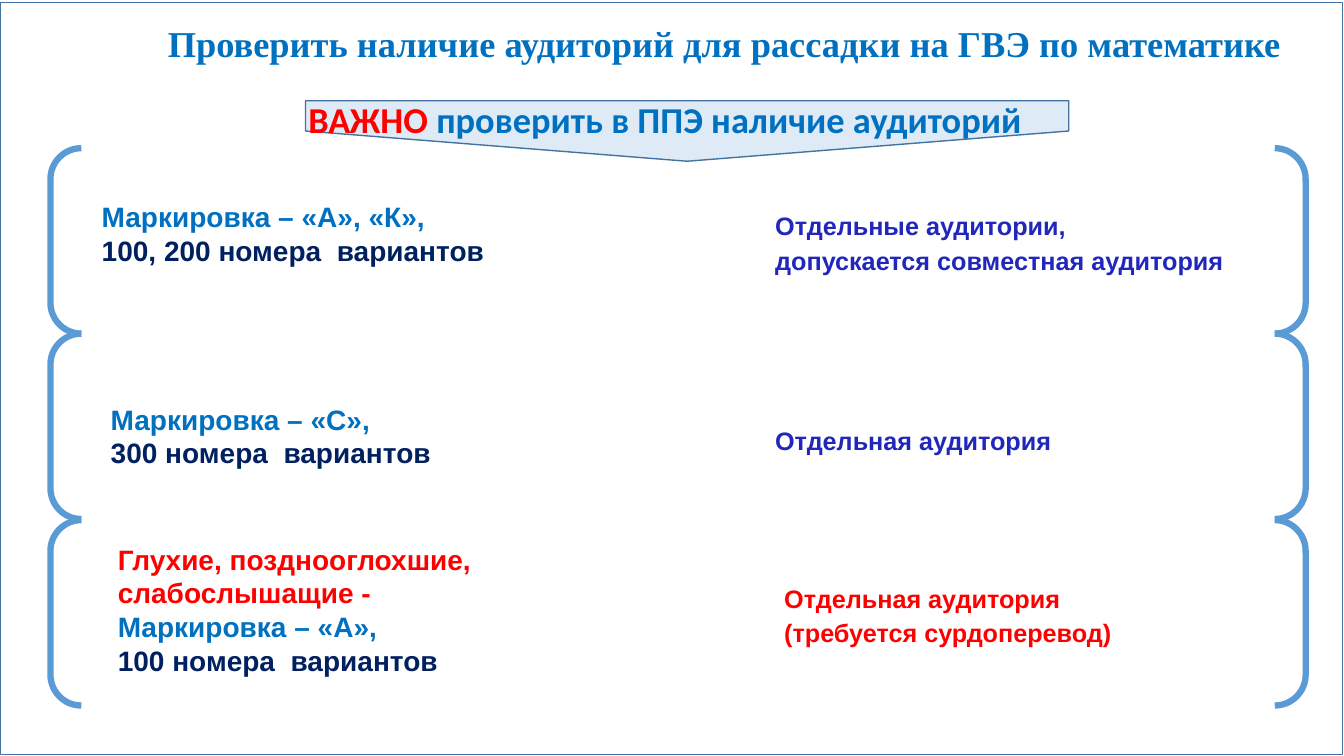
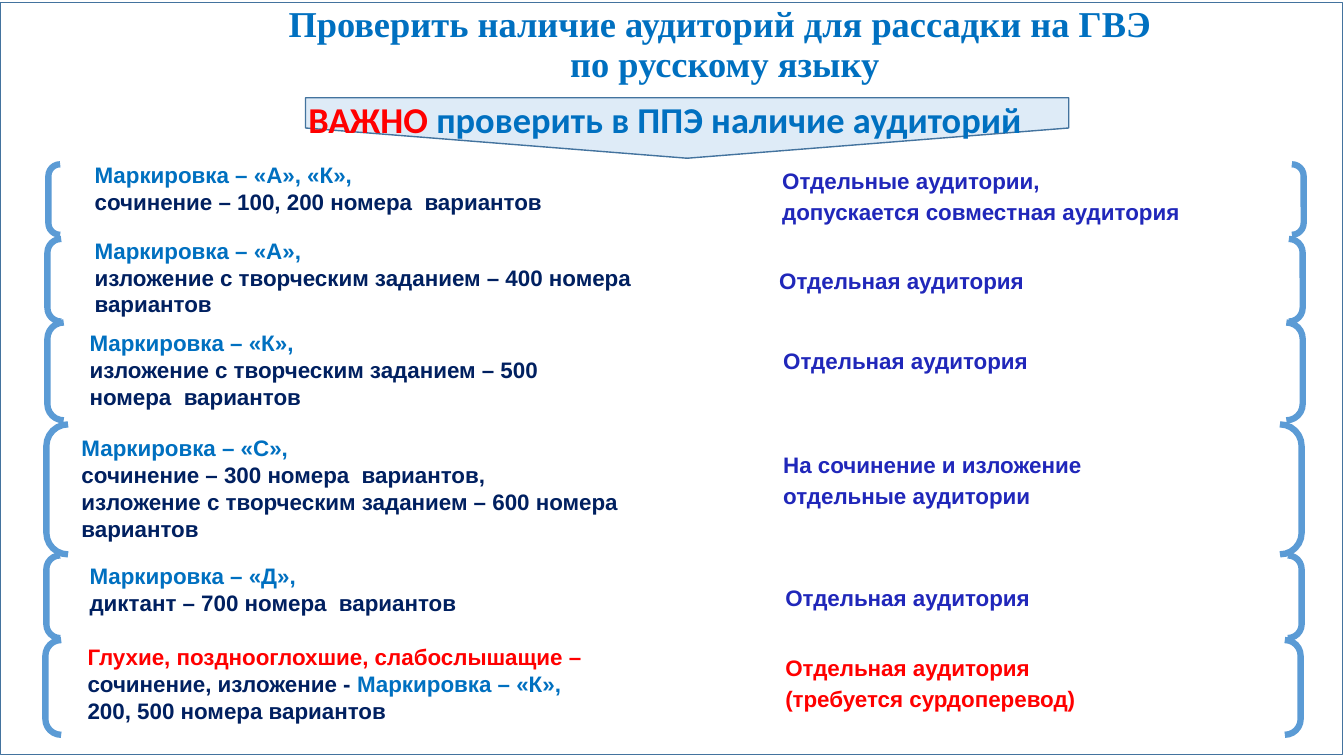
from dataclasses import dataclass

from pptx import Presentation
from pptx import util as u
from pptx.dml import color
from pptx.enum import shapes, text


@dataclass(frozen=True)
class Theme:
    blue: str = "0070C0"
    navy: str = "002060"
    indigo: str = "2027BA"
    red: str = "FF0000"
    bracket: str = "5B9BD5"
    outline: str = "43739E"
    banner: str = "DEEBF7"
    title_font: str = "Times New Roman"
    banner_font: str = "Calibri"
    body_font: str = "Arial"
    heading_size: int = 26


THEME = Theme()


@dataclass(frozen=True)
class Box:
    left: float
    top: float
    width: float
    height: float

    def lengths(self) -> tuple:
        return tuple(u.Inches(v) for v in (self.left, self.top, self.width, self.height))


@dataclass(frozen=True)
class Span:
    text: str
    color: str


@dataclass(frozen=True)
class Style:
    font: str
    size: int
    spacing: float = 1.0
    indent: float = 0.0
    centered: bool = False


@dataclass(frozen=True)
class Label:
    box: Box
    lines: tuple[tuple[Span, ...], ...]


@dataclass(frozen=True)
class Row:
    bracket: Box
    marking: Label
    room: Label


@dataclass(frozen=True)
class Page:
    title: tuple[str, ...]
    banner_top: float
    marking_size: int
    room_size: int
    rows: tuple[Row, ...]


TITLE_BOX = Box(1.31, 0, 11.76, 0.91)
BANNER_TEXT_BOX = Box(0.72, 0.75, 11.76, 0.91)
FRAME_BOX = Box(0, 0.02, 13.31, 7.46)
BANNER_LEFT, BANNER_LENGTH, BANNER_DEPTH = 3.03, 7.57, 0.6
BRACKET_WIDTH = 12.45
HEADING_INSET = 0.04
BANNER_LINE = (Span("ВАЖНО", THEME.red), Span(" проверить в ППЭ наличие аудиторий", THEME.blue))


def bracket(left: float, top: float, height: float) -> Box:
    return Box(left, top, BRACKET_WIDTH, height)


def marking(box: Box, code: str, *variants: str) -> Label:
    heading = (Span(f"Маркировка – {code},", THEME.blue),)
    return Label(box, (heading, *((Span(line, THEME.navy),) for line in variants)))


def room(box: Box, *lines: str, hue: str = THEME.indigo) -> Label:
    return Label(box, tuple((Span(line, hue),) for line in lines))


SHARED_ROOM = ("Отдельные аудитории,", "допускается совместная аудитория")
SINGLE_ROOM = "Отдельная аудитория"
SIGN_ROOM = (SINGLE_ROOM, "(требуется сурдоперевод)")

PAGES = (
    Page(
        ("Проверить наличие аудиторий для рассадки на ГВЭ по математике",),
        1.0, 20, 18,
        (
            Row(bracket(0.5, 1.47, 1.84),
                marking(Box(0.52, 1.93, 5.85, 0.77), "«А», «К»", "100, 200 номера  вариантов"),
                room(Box(7.59, 1.99, 6.01, 0.8), *SHARED_ROOM)),
            Row(bracket(0.5, 3.31, 1.84),
                marking(Box(0.61, 3.94, 5.9, 0.77), "«С»", "300 номера  вариантов"),
                room(Box(7.59, 4.13, 5.17, 0.42), SINGLE_ROOM)),
            Row(bracket(0.5, 5.16, 1.84),
                Label(Box(0.68, 5.33, 6.04, 1.44), (
                    (Span("Глухие, позднооглохшие, слабослышащие -", THEME.red),),
                    (Span("Маркировка – «А»,", THEME.blue),),
                    (Span("100 номера  вариантов", THEME.navy),),
                )),
                room(Box(7.68, 5.69, 5.66, 0.8), *SIGN_ROOM, hue=THEME.red)),
        ),
    ),
    Page(
        ("Проверить наличие аудиторий для рассадки на ГВЭ ", "по русскому языку"),
        0.97, 16, 16,
        (
            Row(bracket(0.48, 1.63, 0.7),
                marking(Box(0.45, 1.55, 6.15, 0.64), "«А», «К»",
                        "сочинение – 100, 200 номера  вариантов"),
                room(Box(7.66, 1.57, 5.17, 0.72), *SHARED_ROOM)),
            Row(bracket(0.47, 2.37, 0.82),
                marking(Box(0.45, 2.3, 6.07, 0.91), "«А»",
                        "изложение с творческим заданием – 400 номера  вариантов"),
                room(Box(7.63, 2.56, 5.3, 0.38), SINGLE_ROOM)),
            Row(bracket(0.47, 3.2, 0.97),
                marking(Box(0.4, 3.22, 5.68, 0.91), "«К»",
                        "изложение с творческим заданием – 500 номера  вариантов"),
                room(Box(7.67, 3.35, 5.26, 0.38), SINGLE_ROOM)),
            Row(bracket(0.46, 4.21, 1.29),
                marking(Box(0.32, 4.26, 6.07, 1.18), "«С»",
                        "сочинение – 300 номера  вариантов,",
                        "изложение с творческим заданием – 600 номера  вариантов"),
                room(Box(7.67, 4.39, 5.04, 0.72),
                     "На сочинение и изложение", "отдельные аудитории")),
            Row(bracket(0.46, 5.51, 0.82),
                marking(Box(0.4, 5.53, 5.98, 0.64), "«Д»", "диктант – 700 номера  вариантов"),
                room(Box(7.69, 5.71, 5.27, 0.38), SINGLE_ROOM)),
            Row(bracket(0.45, 6.35, 0.94),
                Label(Box(0.38, 6.33, 6.67, 0.91), (
                    (Span("Глухие, позднооглохшие, слабослышащие –", THEME.red),
                     Span("сочинение, изложение - ", THEME.navy),
                     Span("Маркировка – «К»,", THEME.blue)),
                    (Span("200, 500 номера вариантов", THEME.navy),),
                )),
                room(Box(7.69, 6.4, 5.6, 0.72), *SIGN_ROOM, hue=THEME.red)),
        ),
    ),
)


def rgb(value: str) -> color.RGBColor:
    return color.RGBColor.from_string(value)


def style_paragraph(paragraph, style: Style) -> None:
    paragraph.line_spacing = style.spacing
    paragraph.alignment = text.PP_ALIGN.CENTER if style.centered else text.PP_ALIGN.LEFT
    if style.indent:
        properties = paragraph._p.get_or_add_pPr()
        properties.set("marL", str(u.Inches(style.indent)))
        properties.set("indent", "0")
    paragraph.font.name = style.font
    paragraph.font.size = u.Pt(style.size)
    paragraph.font.bold = True


def write_line(paragraph, spans: tuple[Span, ...], style: Style) -> None:
    style_paragraph(paragraph, style)
    if len(spans) == 1:
        paragraph.font.color.rgb = rgb(spans[0].color)
    for span in spans:
        run = paragraph.add_run()
        run.text = span.text
        if len(spans) > 1:
            run.font.color.rgb = rgb(span.color)


def add_label(slide, label: Label, style: Style):
    frame = slide.shapes.add_textbox(*label.box.lengths()).text_frame
    frame.word_wrap = True
    frame.auto_size = text.MSO_AUTO_SIZE.SHAPE_TO_FIT_TEXT
    for index, spans in enumerate(label.lines):
        paragraph = frame.add_paragraph() if index else frame.paragraphs[0]
        write_line(paragraph, spans, style)
    return frame


def center_heading(frame) -> None:
    frame.word_wrap = True
    frame.auto_size = text.MSO_AUTO_SIZE.NONE
    frame.vertical_anchor = text.MSO_ANCHOR.MIDDLE
    inset = u.Inches(HEADING_INSET)
    frame.margin_left = frame.margin_top = frame.margin_right = frame.margin_bottom = inset


def add_outline(slide, kind, box: Box, line: str, weight: float, fill: str | None = None):
    shape = slide.shapes.add_shape(kind, *box.lengths())
    shape.shadow.inherit = False
    shape.line.color.rgb = rgb(line)
    shape.line.width = u.Pt(weight)
    if fill:
        shape.fill.solid()
        shape.fill.fore_color.rgb = rgb(fill)
    else:
        shape.fill.background()
    return shape


def add_title(slide, lines: tuple[str, ...]) -> None:
    title = slide.shapes.title
    title.left, title.top, title.width, title.height = TITLE_BOX.lengths()
    center_heading(title.text_frame)
    paragraph = title.text_frame.paragraphs[0]
    style_paragraph(paragraph, Style(THEME.title_font, THEME.heading_size, 0.9, centered=True))
    paragraph.font.color.rgb = rgb(THEME.blue)
    for index, line in enumerate(lines):
        if index:
            paragraph.add_line_break()
        paragraph.add_run().text = line


def add_banner(slide, top: float) -> None:
    shift = (BANNER_LENGTH - BANNER_DEPTH) / 2
    box = Box(BANNER_LEFT + shift, top - shift, BANNER_DEPTH, BANNER_LENGTH)
    arrow = add_outline(slide, shapes.MSO_SHAPE.PENTAGON, box, THEME.outline, 1, THEME.banner)
    arrow.rotation = 90
    style = Style(THEME.banner_font, THEME.heading_size, 0.9, centered=True)
    center_heading(add_label(slide, Label(BANNER_TEXT_BOX, (BANNER_LINE,)), style))


def add_page(presentation, layout, page: Page):
    slide = presentation.slides.add_slide(layout)
    add_title(slide, page.title)
    add_banner(slide, page.banner_top)
    marking_style = Style(THEME.body_font, page.marking_size, indent=0.39)
    room_style = Style(THEME.body_font, page.room_size, spacing=1.15)
    for row in page.rows:
        add_outline(slide, shapes.MSO_SHAPE.DOUBLE_BRACKET, row.bracket, THEME.bracket, 4.5)
        add_label(slide, row.marking, marking_style)
        add_label(slide, row.room, room_style)
    return slide


def add_layout_frame(slide, layout) -> None:
    frame = add_outline(slide, shapes.MSO_SHAPE.RECTANGLE, FRAME_BOX, THEME.outline, 0.25)
    layout.shapes.element.insert(2, frame.element)


def main() -> None:
    presentation = Presentation()
    presentation.slide_width = u.Inches(13.33)
    presentation.slide_height = u.Inches(7.5)
    layout = presentation.slide_layouts.get_by_name("Title Only")
    slides = [add_page(presentation, layout, page) for page in PAGES]
    add_layout_frame(slides[0], layout)
    presentation.save("out.pptx")


if __name__ == "__main__":
    main()
